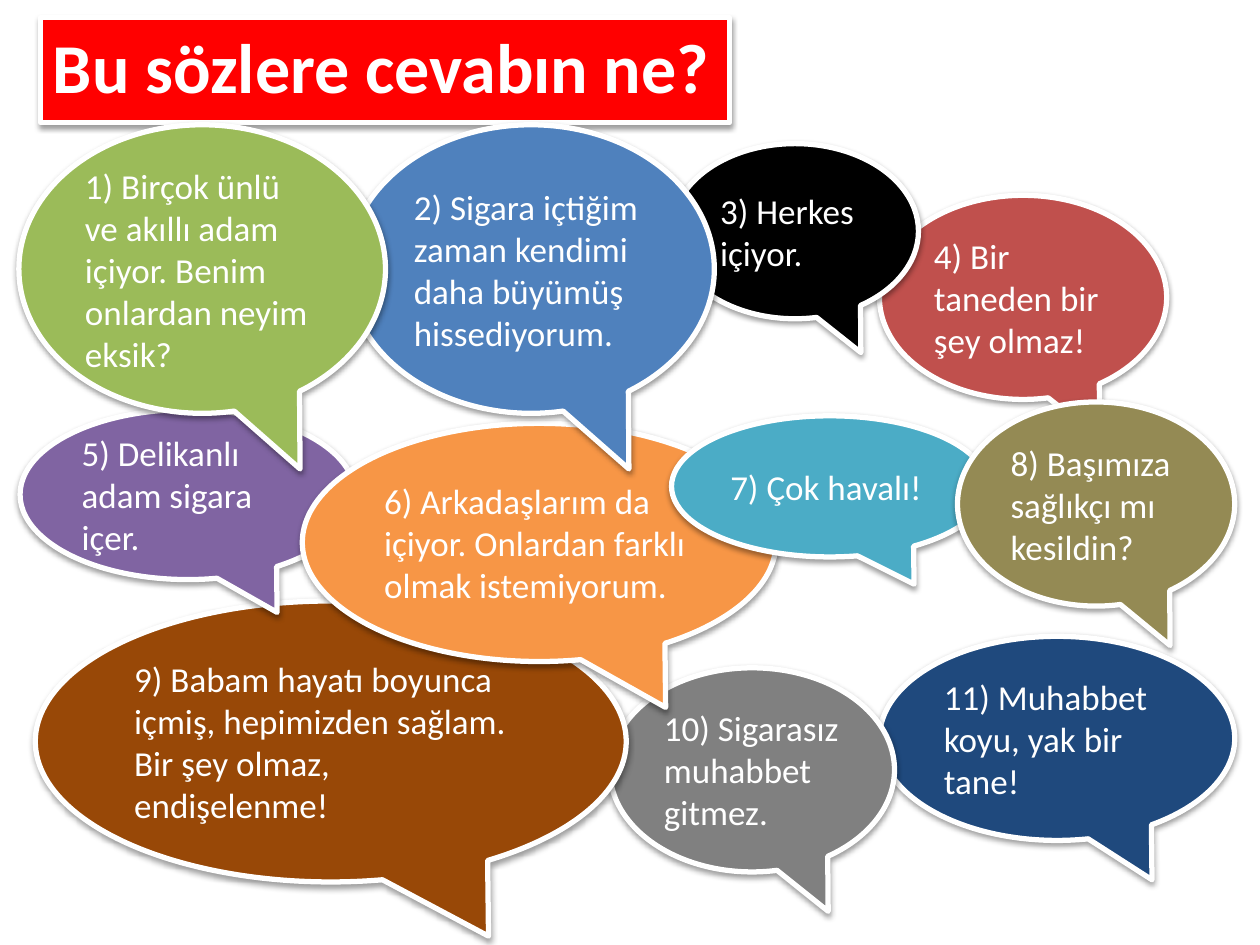
from dataclasses import dataclass

from lxml.etree import SubElement
from pptx import Presentation
from pptx.dml.color import RGBColor
from pptx.enum.shapes import MSO_SHAPE
from pptx.enum.text import MSO_ANCHOR, MSO_AUTO_SIZE, PP_ALIGN
from pptx.oxml.ns import qn
from pptx.util import Inches, Pt


@dataclass(frozen=True)
class Theme:
    font: str = "Calibri"
    title_size: int = 40
    body_size: int = 20
    edge_width: int = 3
    white: str = "FFFFFF"
    black: str = "000000"
    red: str = "FF0000"
    rust: str = "C0504D"
    navy: str = "1F497D"
    gray: str = "808080"
    brown: str = "984807"
    purple: str = "8064A2"
    orange: str = "F79646"
    blue: str = "4F81BD"
    green: str = "9BBB59"
    teal: str = "4BACC6"
    olive: str = "948A54"


THEME = Theme()
TAIL = (0.267, 0.693)  # callout tip, relative to the bubble's centre


@dataclass(frozen=True)
class Bubble:
    left: float
    top: float
    width: float
    height: float
    fill: str
    text: str


# Bubbles overlap, so they are listed from back to front
BUBBLES = [
    Bubble(6.98, 1.55, 2.28, 1.62, THEME.rust, "4) Bir taneden bir şey olmaz!"),
    Bubble(5.33, 1.14, 1.96, 1.39, THEME.black, "3) Herkes içiyor."),
    Bubble(6.98, 5.05, 2.82, 1.62, THEME.navy, "11) Muhabbet koyu, yak bir tane!"),
    Bubble(4.84, 5.3, 2.26, 1.62, THEME.gray, "10) Sigarasız muhabbet gitmez."),
    Bubble(0.28, 4.77, 4.69, 2.23, THEME.brown,
           "9) Babam hayatı boyunca içmiş, hepimizden sağlam. "
           "Bir şey olmaz, endişelenme!"),
    Bubble(0.16, 3.25, 2.66, 1.35, THEME.purple, "5) Delikanlı adam sigara içer."),
    Bubble(2.4, 3.36, 3.76, 1.89, THEME.orange,
           "6) Arkadaşlarım da içiyor. Onlardan farklı olmak istemiyorum."),
    Bubble(2.76, 0.99, 2.91, 2.29, THEME.blue,
           "2) Sigara içtiğim zaman kendimi daha büyümüş hissediyorum."),
    Bubble(0.15, 0.99, 2.91, 2.29, THEME.green,
           "1) Birçok ünlü ve akıllı adam içiyor. Benim onlardan neyim eksik?"),
    Bubble(5.33, 3.3, 2.51, 1.12, THEME.teal, "7) Çok havalı!"),
    Bubble(7.6, 3.19, 2.2, 1.62, THEME.olive, "8) Başımıza sağlıkçı mı kesildin?"),
]


def write(shape, text: str, *, size: int, bold: bool = False,
          anchor=MSO_ANCHOR.MIDDLE, wrap: bool = True,
          fit=MSO_AUTO_SIZE.NONE) -> None:
    frame = shape.text_frame
    frame.word_wrap = wrap
    frame.auto_size = fit
    frame.vertical_anchor = anchor
    line = frame.paragraphs[0]
    line.alignment = PP_ALIGN.LEFT
    run = line.add_run()
    run.text = text
    run.font.name = THEME.font
    run.font.size = Pt(size)
    run.font.bold = bold
    run.font.color.rgb = RGBColor.from_string(THEME.white)


def paint(shape, fill: str) -> None:
    """Solid fill, white edge and a soft shadow straight below."""
    shape.fill.solid()
    shape.fill.fore_color.rgb = RGBColor.from_string(fill)
    shape.line.color.rgb = RGBColor.from_string(THEME.white)
    shape.line.width = Pt(THEME.edge_width)
    shape.shadow.inherit = False
    effects = shape.element.spPr.find(qn("a:effectLst"))
    shadow = SubElement(effects, qn("a:outerShdw"), blurRad="40000",
                        dist="20000", dir="5400000", rotWithShape="0")
    color = SubElement(shadow, qn("a:srgbClr"), val=THEME.black)
    SubElement(color, qn("a:alpha"), val="38000")


def draw_title(slide, text: str) -> None:
    title = slide.shapes.title
    title.left, title.top = Inches(0.32), Inches(0.14)
    title.width, title.height = Inches(5.47), Inches(0.77)
    paint(title, THEME.red)
    write(title, text, size=THEME.title_size, bold=True, wrap=False,
          anchor=MSO_ANCHOR.TOP, fit=MSO_AUTO_SIZE.SHAPE_TO_FIT_TEXT)


def draw_bubble(slide, item: Bubble) -> None:
    box = map(Inches, (item.left, item.top, item.width, item.height))
    shape = slide.shapes.add_shape(MSO_SHAPE.OVAL_CALLOUT, *box)
    for index, value in enumerate(TAIL):
        shape.adjustments[index] = value
    paint(shape, item.fill)
    write(shape, item.text, size=THEME.body_size)


def main() -> None:
    deck = Presentation()
    deck.slide_width, deck.slide_height = Inches(10), Inches(7.5)
    slide = deck.slides.add_slide(deck.slide_layouts[5])  # Title Only
    draw_title(slide, "Bu sözlere cevabın ne?")
    for item in BUBBLES:
        draw_bubble(slide, item)
    deck.save("out.pptx")


if __name__ == "__main__":
    main()
